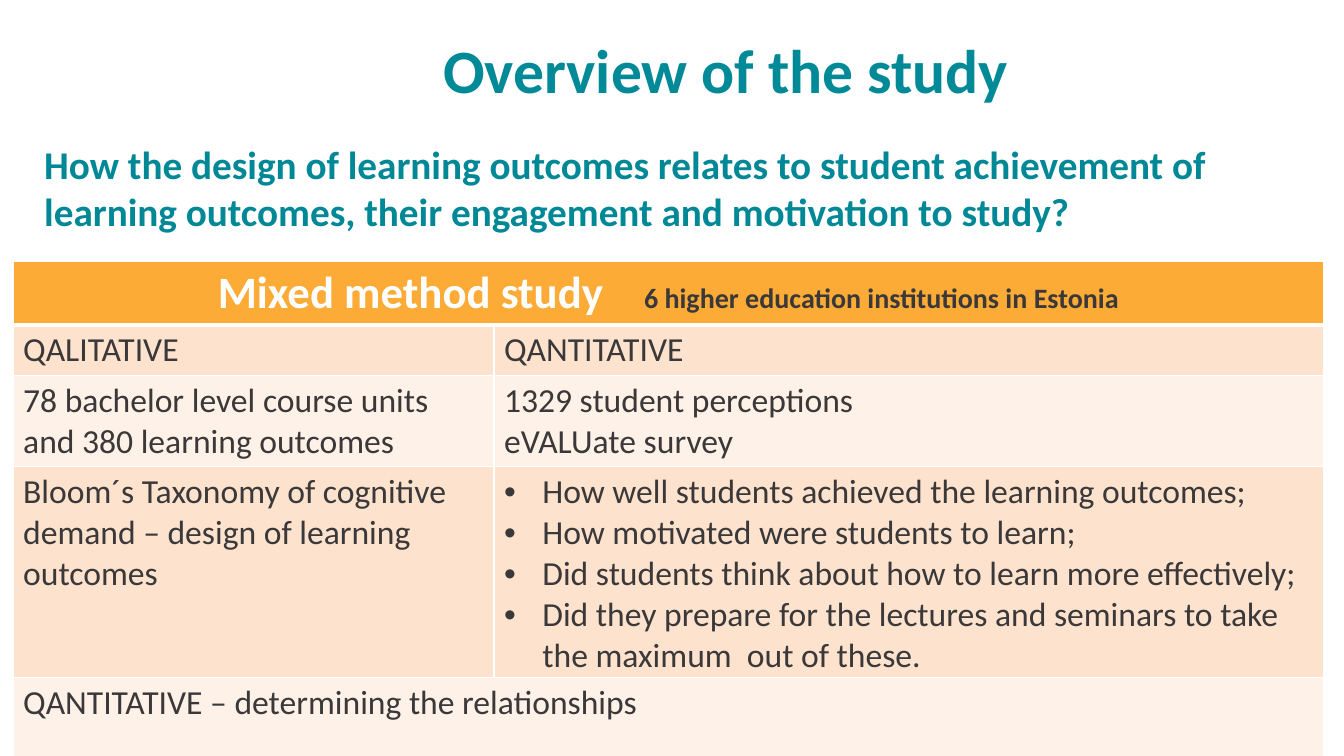
from lxml import etree
from pptx import Presentation
from pptx.dml.color import RGBColor
from pptx.enum.text import MSO_ANCHOR, MSO_AUTO_SIZE, PP_ALIGN
from pptx.oxml.ns import qn
from pptx.util import Inches, Pt

CENTER, MIDDLE = PP_ALIGN.CENTER, MSO_ANCHOR.MIDDLE
GROW = MSO_AUTO_SIZE.SHAPE_TO_FIT_TEXT
FONT = "Calibri"
COLORS = {"title": "008996", "query": "008896", "head": "FBAB36", "dark": "FDE2CE",
          "light": "FEF1E8", "white": "FFFFFF", "text": "3A3838"}


def style(run, size, color, bold=False):
    font = run.font
    font.name, font.size, font.bold = FONT, Pt(size), bold
    font.color.rgb = RGBColor.from_string(COLORS[color])


def edge(cell, side, width, place):
    line = etree.Element(qn("a:ln" + side), w=str(Pt(width)))
    fill = etree.SubElement(line, qn("a:solidFill"))
    etree.SubElement(fill, qn("a:srgbClr"), val=COLORS["white"])
    cell._tc.get_or_add_tcPr().insert(place, line)


deck = Presentation()
deck.slide_width, deck.slide_height = Inches(13.33), Inches(7.5)
slide = deck.slides.add_slide(deck.slide_layouts[5])

# Title
title = slide.shapes.title
title.left, title.top = Inches(1.74), 0
title.width, title.height = Inches(10.92), Inches(1.45)
frame = title.text_frame
frame.text = "Overview of the study"
frame.vertical_anchor = MIDDLE
para = frame.paragraphs[0]
para.alignment, para.line_spacing = CENTER, 0.9
style(para.runs[0], 44, "title", True)

# Research question
query = slide.shapes.add_textbox(Inches(0.34), Inches(1.34), Inches(12.99), Inches(1.04))
frame = query.text_frame
frame.word_wrap, frame.auto_size = True, GROW
frame.text = ("How the design of learning outcomes relates to student achievement of "
              "learning outcomes, their engagement and motivation to study?")
style(frame.paragraphs[0].runs[0], 28, "query", True)

# Table grid
cols = [4.77, 8.23]
rows = [0.62, 0.49, 0.88, 2.05, 0.88]
grid = slide.shapes.add_table(len(rows), len(cols), Inches(0.13), Inches(2.59),
                              Inches(sum(cols)), Inches(sum(rows))).table
for col, width in zip(grid.columns, cols):
    col.width = Inches(width)
for row, height in zip(grid.rows, rows):
    row.height = Inches(height)
for r in (0, len(rows) - 1):
    grid.cell(r, 0).merge(grid.cell(r, 1))

# Cell fills and borders
for r, row in enumerate(grid.rows):
    shade = "head" if r == 0 else "dark" if r % 2 else "light"
    for cell in row.cells:
        cell.fill.solid()
        cell.fill.fore_color.rgb = RGBColor.from_string(COLORS[shade])
        for place, side in enumerate("LRTB"):
            thick = (r == 0 and side == "B") or (r == 1 and side == "T")
            edge(cell, side, 3 if thick else 1, place)

# Header row, with one widened space between its two parts
para = grid.cell(0, 0).text_frame.paragraphs[0]
para.alignment = CENTER
parts = [("Mixed method study", 32, "white"), (" ", 32, "white"),
         ("6 higher education institutions in Estonia", 20, "text")]
for text, size, color in parts:
    run = para.add_run()
    run.text = text
    style(run, size, color, True)
para.runs[1].font._element.set("spc", "2170")

# Body rows
body = [
    ["QALITATIVE", "QANTITATIVE"],
    ["78 bachelor level course units and 380 learning outcomes",
     "1329 student perceptions\neVALUate survey"],
    ["Bloom´s Taxonomy of cognitive demand – design of learning outcomes",
     "How well students achieved the learning outcomes;\n"
     "How motivated were students to learn;\n"
     "Did students think about how to learn more effectively;\n"
     "Did they prepare for the lectures and seminars to take the maximum  out of these."],
    ["QANTITATIVE – determining the relationships"],
]
for r, texts in enumerate(body, 1):
    for c, text in enumerate(texts):
        frame = grid.cell(r, c).text_frame
        frame.text = text
        for para in frame.paragraphs:
            if (r, c) == (3, 1):
                props = para._p.get_or_add_pPr()
                props.set("marL", str(Inches(0.38)))
                props.set("indent", str(-Inches(0.38)))
                etree.SubElement(props, qn("a:buFont"), typeface="Arial")
                etree.SubElement(props, qn("a:buChar"), char="•")
            style(para.runs[0], 24, "text")

deck.save("out.pptx")
